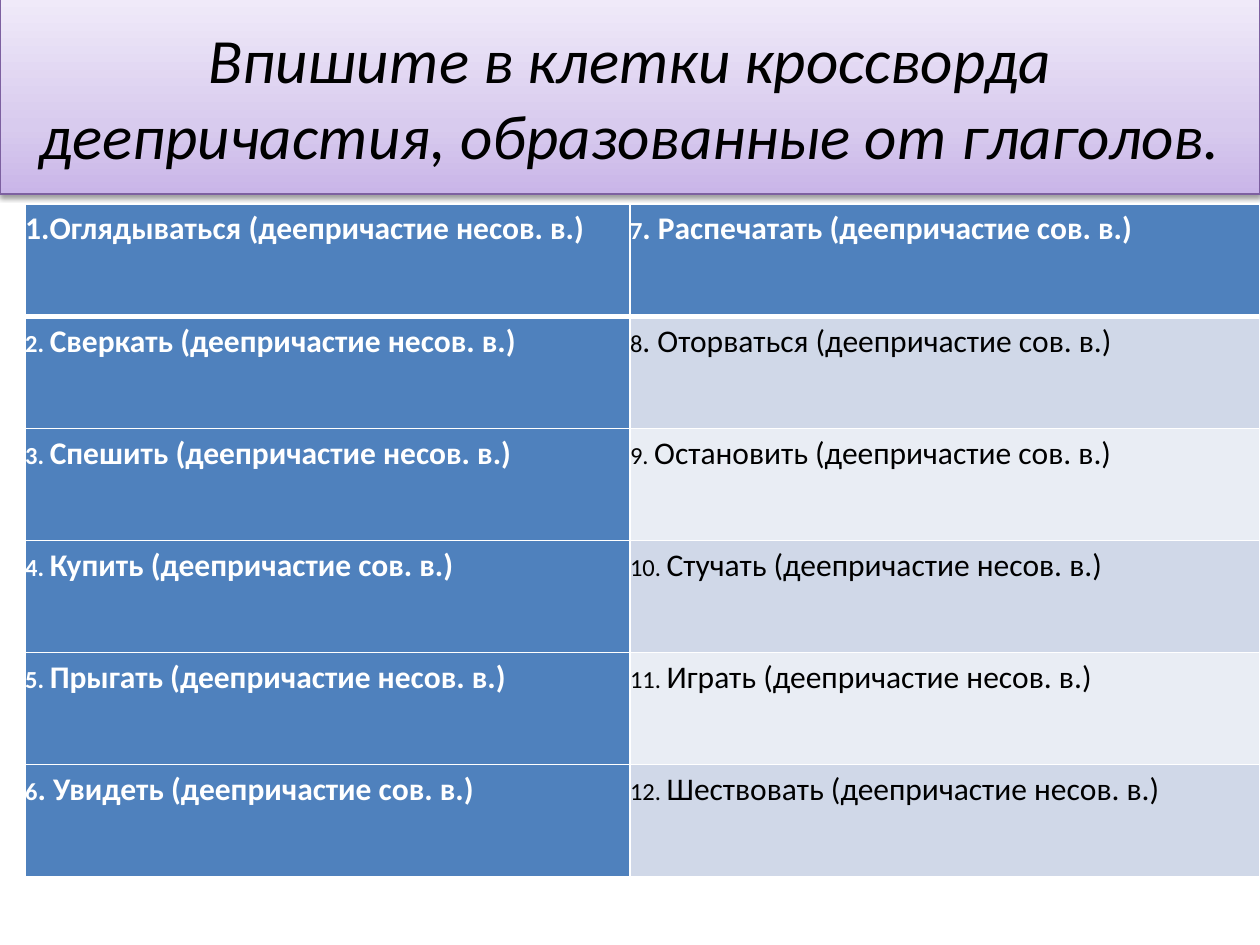
from pptx import Presentation
from pptx.dml.color import RGBColor as Rgb
from pptx.enum.text import MSO_ANCHOR as Anchor, PP_ALIGN as Align
from pptx.oxml import parse_xml
from pptx.oxml.ns import nsdecls
from pptx.util import Inches, Pt

TITLE = "Впишите в клетки кроссворда деепричастия, образованные от глаголов."
ROWS = [
    (("", "1.Оглядываться (деепричастие несов. в.)"),
     ("7", ". Распечатать (деепричастие сов. в.)")),
    (("2. ", "Сверкать (деепричастие несов. в.)"),
     ("8", ". Оторваться (деепричастие сов. в.)")),
    (("3. ", "Спешить (деепричастие несов. в.)"),
     ("9. ", "Остановить (деепричастие сов. в.)")),
    (("4. ", "Купить (деепричастие сов. в.)"),
     ("10. ", "Стучать (деепричастие несов. в.)")),
    (("5. ", "Прыгать (деепричастие несов. в.)"),
     ("11. ", "Играть (деепричастие несов. в.)")),
    (("6", ". Увидеть (деепричастие сов. в.)"),
     ("12. ", "Шествовать (деепричастие несов. в.)")),
]
COLORS = {"head": "4F81BD", "odd": "D0D8E8", "even": "E9EDF4",
          "white": "FFFFFF", "black": "000000", "edge": "7D60A0"}
STOPS = [(0, "C9B5E8"), (35, "D8CBEE"), (100, "F0EAF9")]
WIDTHS = [4.8, 5]
HIGH = 0.89
SIZES = (14, 18)
TITLE_FONT = {"name": "Calibri", "size": Pt(36), "italic": True, "bold": False}
INSETS = ("margin_left", "margin_top", "margin_right", "margin_bottom")
PARA = {"line_spacing": 1.15, "space_after": Pt(15), "alignment": Align.LEFT}


def apply(obj, values):
    for key, val in values.items():
        setattr(obj, key, val)


def color(name):
    return Rgb.from_string(COLORS[name])


def add_title(slide):
    shape = slide.shapes.title
    apply(shape, {"left": Inches(0), "top": Inches(-0.01),
                  "width": Inches(10), "height": Inches(1.55)})
    props = shape._element.spPr
    stops = "".join(f'<a:gs pos="{pos * 1000}"><a:srgbClr val="{tone}"/></a:gs>'
                    for pos, tone in STOPS)
    props.append(parse_xml(
        f'<a:gradFill {nsdecls("a")} rotWithShape="1"><a:gsLst>{stops}</a:gsLst>'
        '<a:lin ang="16200000" scaled="1"/></a:gradFill>'))
    shape.line.color.rgb = color("edge")
    shape.line.width = Pt(0.75)
    props.append(parse_xml(
        f'<a:effectLst {nsdecls("a")}><a:outerShdw blurRad="{Pt(3.1)}" '
        f'dist="{Pt(1.6)}" dir="5400000" rotWithShape="0">'
        f'<a:srgbClr val="{COLORS["black"]}"><a:alpha val="38000"/></a:srgbClr>'
        '</a:outerShdw></a:effectLst>'))
    frame = shape.text_frame
    apply(frame, {"word_wrap": True, "vertical_anchor": Anchor.MIDDLE})
    para = frame.paragraphs[0]
    para.alignment = Align.CENTER
    run = para.add_run()
    run.text = TITLE
    apply(run.font, TITLE_FONT)
    run.font.color.rgb = color("black")


def add_edges(cell, row):
    props = cell._tc.get_or_add_tcPr()
    for spot, side in enumerate("LRTB"):
        thick = (row, side) in ((0, "B"), (1, "T"))
        props.insert(spot, parse_xml(
            f'<a:ln{side} {nsdecls("a")} w="{Pt(3 if thick else 1)}"><a:solidFill>'
            f'<a:srgbClr val="{COLORS["white"]}"/></a:solidFill></a:ln{side}>'))


def fill_cell(cell, parts, row, col):
    bold = row == 0 or col == 0
    tone = "head" if bold else "odd" if row % 2 else "even"
    cell.fill.solid()
    cell.fill.fore_color.rgb = color(tone)
    add_edges(cell, row)
    apply(cell, dict.fromkeys(INSETS, 0))
    para = cell.text_frame.paragraphs[0]
    apply(para, PARA)
    for text, size in zip(parts, SIZES):
        if text:
            run = para.add_run()
            run.text = text
            apply(run.font, {"name": "Calibri", "size": Pt(size), "bold": bold})
            run.font.color.rgb = color("white" if bold else "black")


def add_grid(slide):
    grid = slide.shapes.add_table(
        len(ROWS), len(WIDTHS), Inches(0.2), Inches(1.62),
        Inches(sum(WIDTHS)), Inches(HIGH * len(ROWS))).table
    for col, width in enumerate(WIDTHS):
        grid.columns[col].width = Inches(width)
    for row, cells in enumerate(ROWS):
        grid.rows[row].height = Inches(HIGH)
        for col, parts in enumerate(cells):
            fill_cell(grid.cell(row, col), parts, row, col)


def main():
    deck = Presentation()
    apply(deck, {"slide_width": Inches(10), "slide_height": Inches(7.5)})
    slide = deck.slides.add_slide(deck.slide_layouts[5])
    add_title(slide)
    add_grid(slide)
    deck.save("out.pptx")


if __name__ == "__main__":
    main()
